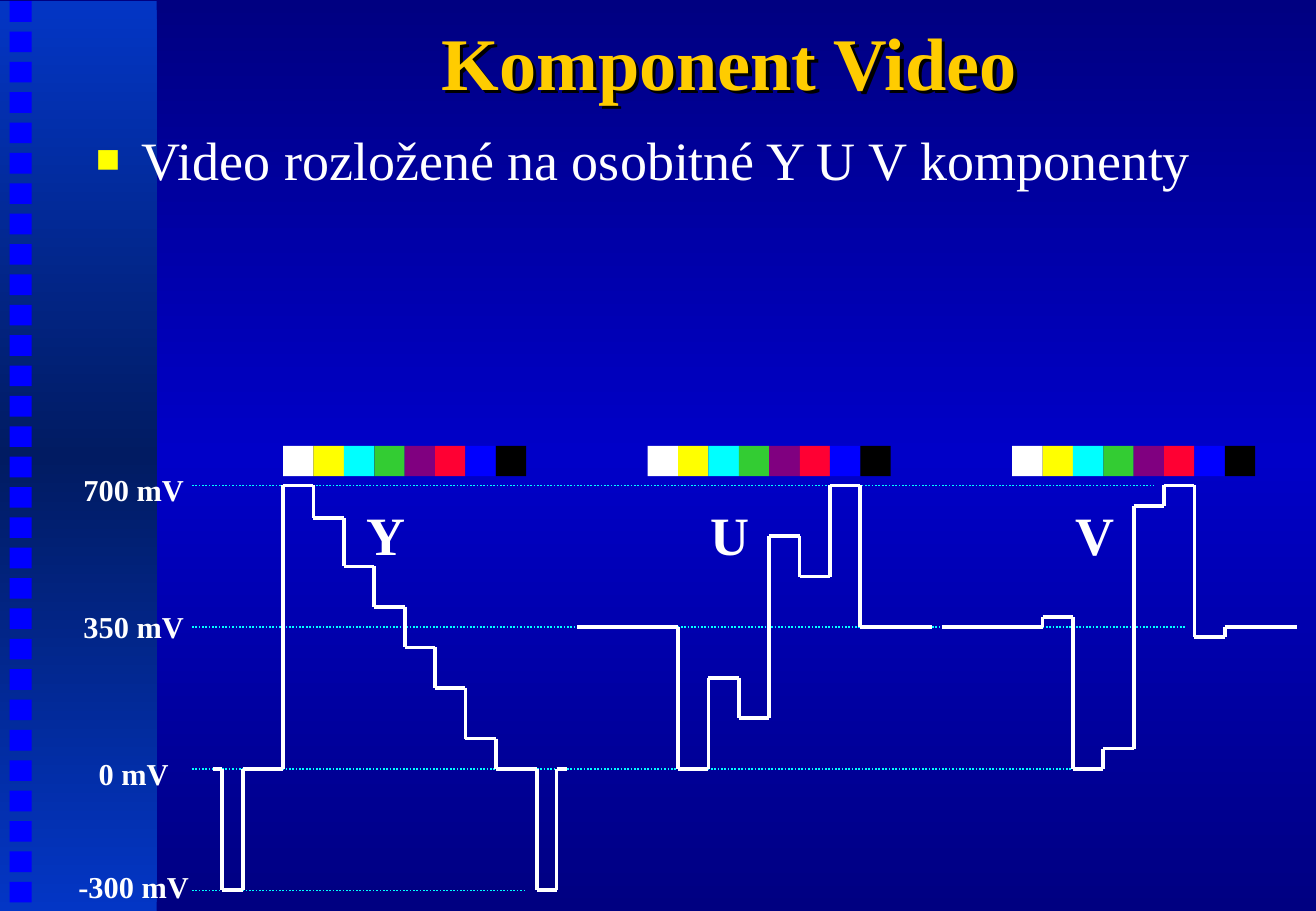
from lxml import etree
from pptx import Presentation
from pptx.dml.color import RGBColor
from pptx.enum.dml import MSO_LINE
from pptx.enum.shapes import MSO_CONNECTOR, MSO_SHAPE
from pptx.enum.text import MSO_ANCHOR, PP_ALIGN
from pptx.oxml.ns import qn
from pptx.util import Inches, Pt

RECTANGLE = MSO_SHAPE.RECTANGLE
STRAIGHT = MSO_CONNECTOR.STRAIGHT
DOTTED = MSO_LINE.ROUND_DOT
MIDDLE = MSO_ANCHOR.MIDDLE
TOP = MSO_ANCHOR.TOP
CENTER = PP_ALIGN.CENTER
LEFT = PP_ALIGN.LEFT

WHITE = RGBColor(0xFF, 0xFF, 0xFF)
YELLOW = RGBColor(0xFF, 0xFF, 0x00)
CYAN = RGBColor(0x00, 0xFF, 0xFF)
GREEN = RGBColor(0x33, 0xCC, 0x33)
PURPLE = RGBColor(0x80, 0x00, 0x80)
RED = RGBColor(0xFF, 0x00, 0x33)
BLUE = RGBColor(0x00, 0x00, 0xFF)
BLACK = RGBColor(0x00, 0x00, 0x00)
GOLD = RGBColor(0xFF, 0xCC, 0x00)
NAVY = RGBColor(0x00, 0x00, 0x81)
ROYAL = RGBColor(0x00, 0x00, 0xC8)
BAND_LIGHT = RGBColor(0x03, 0x36, 0xC5)
BAND_DARK = RGBColor(0x01, 0x1B, 0x62)

FONT = "Times New Roman"
TITLE = "Komponent Video "
BODY = "Video rozložené na osobitné Y U V komponenty"
BAR_COLORS = [WHITE, YELLOW, CYAN, GREEN, PURPLE, RED, BLUE, BLACK]

GUIDES = [
    {"label": "700 mV", "level": 700, "label_top": 3.83, "end": 9.5},
    {"label": "350 mV", "level": 350, "label_top": 4.96, "end": 9.75},
    {"label": "0 mV", "level": 0, "label_top": 6.17, "end": 8.83},
    {"label": "-300 mV", "level": -300, "label_top": 7.1, "end": 4.33},
]
SIGNALS = [
    {"name": "Y", "name_left": 2.92, "bars_left": 2.33,
     "before": [(1.75, 0), (1.83, -300), (2, 0)],
     "levels": [700, 620, 500, 400, 300, 200, 75, 0],
     "after": [(4.42, -300), (4.58, 0)], "end": 4.67},
    {"name": "U", "name_left": 5.75, "bars_left": 5.33,
     "before": [(4.75, 350)],
     "levels": [350, 0, 225, 125, 575, 475, 700, 350],
     "after": [], "end": 7.67},
    {"name": "V", "name_left": 8.75, "bars_left": 8.33,
     "before": [(7.75, 350)],
     "levels": [350, 375, 0, 50, 650, 700, 325, 350],
     "after": [], "end": 10.67},
]
BAR_SIZE = 0.25
BARS_TOP = 3.67
ZERO_Y = 6.33
MILLIVOLTS_PER_INCH = 300
GUIDE_LEFT = 1.58
LABEL_LEFT = 0.45
LABEL_WIDTH = 1.3
SQUARE_COUNT = 30
SQUARE_PITCH = 0.25


def level_y(millivolts):
    return ZERO_Y - millivolts / MILLIVOLTS_PER_INCH


def apply_gradient(fill, element, colors):
    fill.gradient()
    fill.gradient_angle = 270
    stops = next(element.iter(qn("a:gsLst")))
    for stop in list(stops):
        stops.remove(stop)
    for index, color in enumerate(colors):
        position = 100000 * index // (len(colors) - 1)
        stop = etree.SubElement(stops, qn("a:gs"), pos=str(position))
        etree.SubElement(stop, qn("a:srgbClr"), val=str(color))


def add_rectangle(slide, left, top, width, height, color):
    shape = slide.shapes.add_shape(
        RECTANGLE, Inches(left), Inches(top), Inches(width), Inches(height))
    shape.shadow.inherit = False
    shape.line.fill.background()
    shape.fill.solid()
    shape.fill.fore_color.rgb = color
    return shape


def add_line(slide, start, end, color, width):
    line = slide.shapes.add_connector(
        STRAIGHT, *[Inches(value) for value in (*start, *end)])
    line.line.color.rgb = color
    line.line.width = Pt(width)
    etree.SubElement(line._element.spPr, qn("a:effectLst"))
    return line


def add_text(slide, box, text, size, color=WHITE, bold=True,
             align=CENTER, anchor=TOP, wrap=False, bullet=False):
    shape = slide.shapes.add_textbox(*[Inches(value) for value in box])
    frame = shape.text_frame
    frame.word_wrap = wrap
    frame.vertical_anchor = anchor
    paragraph = frame.paragraphs[0]
    paragraph.text = text
    paragraph.alignment = align
    if bullet:
        add_bullet(paragraph)
    paragraph.font.name = FONT
    paragraph.font.size = Pt(size)
    paragraph.font.bold = bold
    paragraph.font.color.rgb = color
    return shape


def add_bullet(paragraph):
    properties = paragraph._p.get_or_add_pPr()
    properties.set("marL", str(Inches(0.38)))
    properties.set("indent", str(-Inches(0.38)))
    color = etree.SubElement(properties, qn("a:buClr"))
    etree.SubElement(color, qn("a:srgbClr"), val=str(YELLOW))
    etree.SubElement(properties, qn("a:buSzPct"), val="75000")
    etree.SubElement(properties, qn("a:buFont"), typeface=FONT)
    etree.SubElement(properties, qn("a:buChar"), char="■")


def add_shadow(shape):
    effects = etree.SubElement(shape._element.spPr, qn("a:effectLst"))
    shadow = etree.SubElement(
        effects, qn("a:outerShdw"), dist=str(Inches(0.04)), dir="2700000")
    etree.SubElement(shadow, qn("a:srgbClr"), val=str(BLACK))


def add_waveform(slide, signal):
    bars = [(signal["bars_left"] + index * BAR_SIZE, level)
            for index, level in enumerate(signal["levels"])]
    steps = []
    for x, level in signal["before"] + bars + signal["after"]:
        if not steps or steps[-1][1] != level:
            steps.append((x, level))
    steps.append((signal["end"], steps[-1][1]))
    for (x, level), (next_x, next_level) in zip(steps, steps[1:]):
        corner = (next_x, level_y(level))
        add_line(slide, (x, level_y(level)), corner, WHITE, 2.25)
        if next_level != level:
            add_line(slide, corner, (next_x, level_y(next_level)), WHITE, 2.25)


def main():
    presentation = Presentation()
    presentation.slide_width = Inches(10.83)
    presentation.slide_height = Inches(7.5)
    slide = presentation.slides.add_slide(presentation.slide_layouts[6])
    apply_gradient(slide.background.fill, slide._element, [NAVY, ROYAL, NAVY])

    band = add_rectangle(slide, 0, 0.01, 1.29, 7.49, BAND_LIGHT)
    apply_gradient(band.fill, band._element, [BAND_LIGHT, BAND_DARK, BAND_LIGHT])
    for index in range(SQUARE_COUNT):
        add_rectangle(slide, 0.08, 0.01 + index * SQUARE_PITCH, 0.18, 0.17, BLUE)

    title = add_text(slide, (1.33, 0, 9.5, 1), TITLE, 44, GOLD,
                     anchor=MIDDLE, wrap=True)
    add_shadow(title)
    add_text(slide, (0.69, 0.99, 9.5, 5.83), BODY, 32, bold=False,
             align=LEFT, wrap=True, bullet=True)

    for guide in GUIDES:
        y = level_y(guide["level"])
        line = add_line(slide, (GUIDE_LEFT, y), (guide["end"], y), CYAN, 1)
        line.line.dash_style = DOTTED
        add_text(slide, (LABEL_LEFT, guide["label_top"], LABEL_WIDTH, 0.4),
                 guide["label"], 18)

    for signal in SIGNALS:
        for index, color in enumerate(BAR_COLORS):
            add_rectangle(slide, signal["bars_left"] + index * BAR_SIZE,
                          BARS_TOP, BAR_SIZE, BAR_SIZE, color)
        add_waveform(slide, signal)
        add_text(slide, (signal["name_left"], 4.08, 0.52, 0.63), signal["name"], 32)

    presentation.save("out.pptx")


if __name__ == "__main__":
    main()
